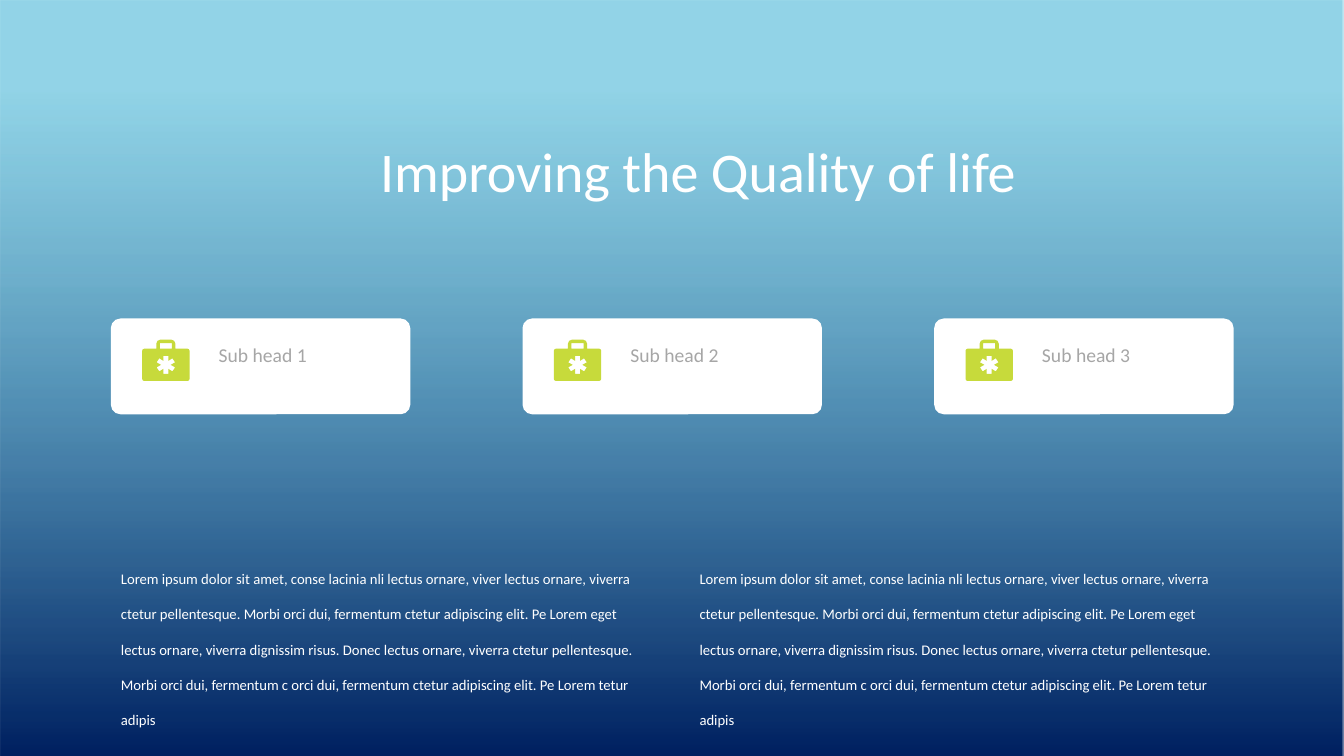
from lxml.etree import SubElement
from pptx import Presentation
from pptx.dml.color import RGBColor
from pptx.enum.shapes import MSO_SHAPE as Preset
from pptx.enum.text import MSO_ANCHOR as Anchor, MSO_AUTO_SIZE as AutoSize, PP_ALIGN as Align
from pptx.oxml.ns import qn
from pptx.util import Inches, Pt

COLORS = {"sky": "33AFD2", "navy": "002060", "white": "FFFFFF", "lime": "C7DA3B", "grey": "A6A6A6"}
WIDTH, HEIGHT = Inches(13.33), Inches(7.5)
MARGIN, CARD_PITCH, BODY_PITCH = 8.25, 30.63, 43.05
CARD_TOP = 42.13

KIT_WIDTH = 470
KIT_HALVES = [
    [(180, 0), (152, 12), (140, 40), (140, 90), (20, 90), (6, 96), (0, 110),
     (0, 390), (6, 404), (20, 410)],
    [(175, 35), (175, 90)],
    [(210, 160), (210, 210), (170, 185), (143, 225), (187, 250),
     (143, 275), (170, 315), (210, 290), (210, 340)],
]

BODY = (
    "Lorem ipsum dolor sit amet, conse lacinia nli lectus ornare, viver lectus ornare, viverra "
    "ctetur pellentesque. Morbi orci dui, fermentum ctetur adipiscing elit. Pe Lorem eget "
    "lectus ornare, viverra dignissim risus. Donec lectus ornare, viverra ctetur pellentesque. "
    "Morbi orci dui, fermentum c orci dui, fermentum ctetur adipiscing elit. Pe Lorem tetur adipis"
)


def share(left, top, width, height):
    """Turn percentages of the slide into lengths."""
    return [int(part * side / 100)
            for part, side in zip((left, top, width, height), (WIDTH, HEIGHT) * 2)]


def rgb(color):
    """Look up a named colour."""
    return RGBColor.from_string(COLORS[color])


def paint(shape, color):
    """Give a shape a plain fill without line or shadow."""
    shape.shadow.inherit = False
    shape.line.fill.background()
    shape.fill.solid()
    shape.fill.fore_color.rgb = rgb(color)


def write(holder, text, area, size, color="white", align=Align.LEFT, spacing=1.0):
    """Place a text holder and fill it with one formatted paragraph."""
    holder.left, holder.top, holder.width, holder.height = share(*area)
    frame = holder.text_frame
    frame.text = text
    frame.word_wrap = True
    frame.auto_size = AutoSize.SHAPE_TO_FIT_TEXT
    frame.vertical_anchor = Anchor.TOP
    paragraph = frame.paragraphs[0]
    paragraph.alignment = align
    paragraph.line_spacing = spacing
    paragraph.space_before = Pt(0)
    font = paragraph.runs[0].font
    font.name, font.size, font.color.rgb = "Calibri", Pt(size), rgb(color)
    return paragraph


def add_backdrop(slide):
    """Cover the slide with a vertical gradient behind everything."""
    backdrop = slide.shapes.add_shape(Preset.RECTANGLE, 0, 0, WIDTH, HEIGHT)
    paint(backdrop, "white")
    backdrop.fill.gradient()
    backdrop.fill.gradient_angle = 270
    top, bottom = backdrop.fill.gradient_stops
    top.position, top.color.rgb = 0.12, rgb("sky")
    bottom.position, bottom.color.rgb = 1.0, rgb("navy")
    sky = next(backdrop._element.iter(qn("a:srgbClr")))
    SubElement(sky, qn("a:alpha"), val="53000")
    backdrop._element.getparent().insert(2, backdrop._element)


def add_kit(slide, left, top):
    """Draw the first-aid kit by mirroring its left half."""
    contours = [half + [(KIT_WIDTH - x, y) for x, y in reversed(half)] for half in KIT_HALVES]
    builder = slide.shapes.build_freeform(*contours[0][0], scale=Inches(0.001))
    for contour in contours:
        if contour is not contours[0]:
            builder.move_to(*contour[0])
        builder.add_line_segments(contour[1:], close=True)
    origin = share(left, top, 0, 0)[:2]
    paint(builder.convert_to_shape(*origin), "lime")


def add_card(slide, index):
    """Add one rounded card with its kit and sub head."""
    left = MARGIN + index * CARD_PITCH
    card = slide.shapes.add_shape(
        Preset.ROUNDED_RECTANGLE, *share(left, CARD_TOP, 22.28, 12.67))
    card.adjustments[0] = 0.1
    paint(card, "white")
    add_kit(slide, left + 2.33, CARD_TOP + 2.8)
    area = (left + 7.28, CARD_TOP + 2.54, 13.58, 4.53)
    label = slide.shapes.add_textbox(*share(*area))
    write(label, f"Sub head {index + 1}", area, 14, "grey")


def fill_body(holder, index):
    """Set one unbulleted text column."""
    area = (MARGIN + index * BODY_PITCH, 72.4, 40.43, 19.6)
    properties = write(holder, BODY, area, 10.5, spacing=2.0)._p.get_or_add_pPr()
    properties.set("marL", "0")
    properties.set("indent", "0")
    SubElement(properties, qn("a:buNone"))


def main():
    """Build and save the slide."""
    deck = Presentation()
    deck.slide_width, deck.slide_height = WIDTH, HEIGHT
    slide = deck.slides.add_slide(deck.slide_layouts[3])
    title, *columns = slide.placeholders
    add_backdrop(slide)
    write(title, "Improving the Quality of life", (21.83, 17.33, 60.23, 10.27), 40,
          align=Align.CENTER)
    for index in range(3):
        add_card(slide, index)
    for index, column in enumerate(columns):
        fill_body(column, index)
    deck.save("out.pptx")


if __name__ == "__main__":
    main()
